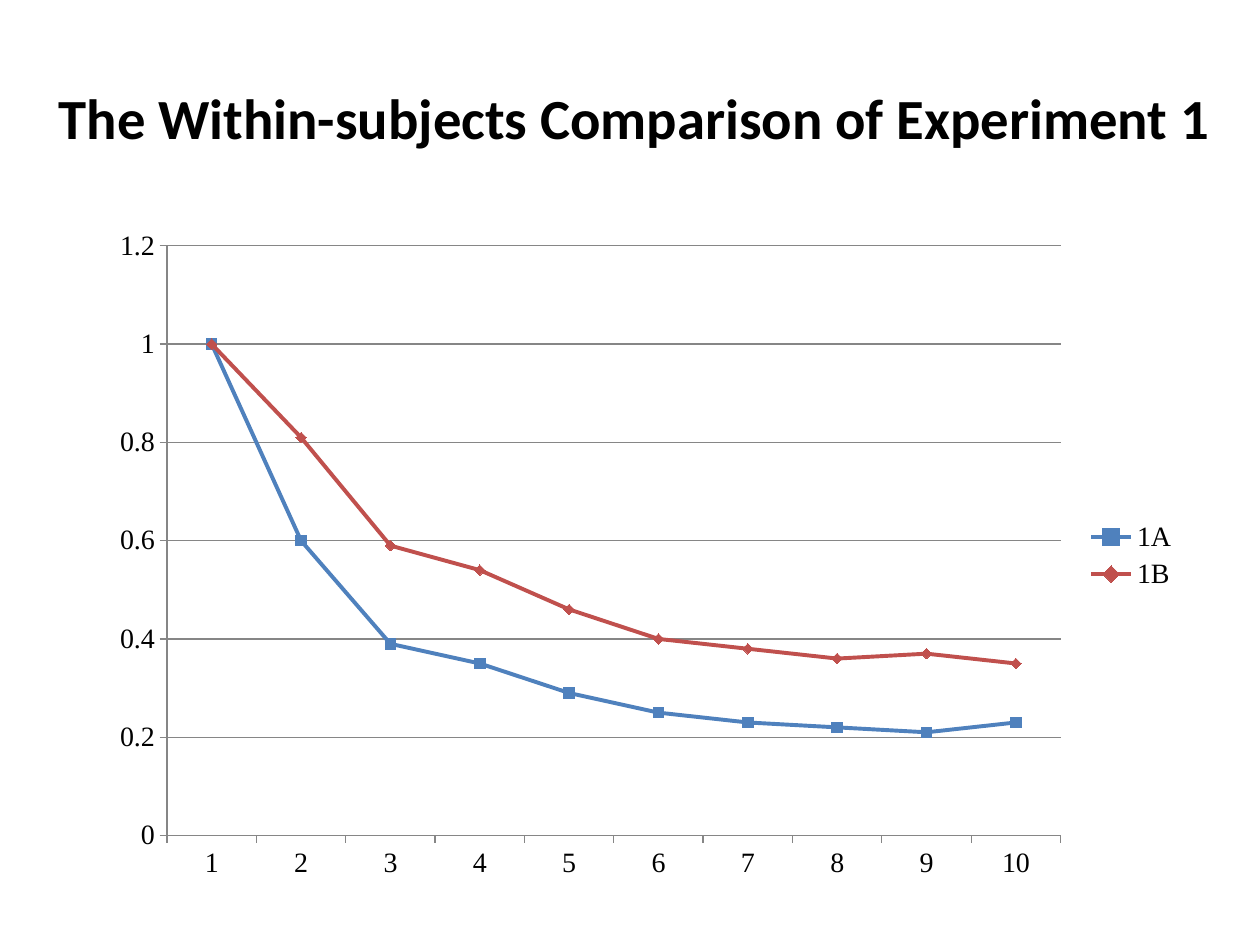
"""Build a slide with a line chart of the within-subjects comparison."""
from lxml import etree
from pptx import Presentation
from pptx.chart.data import CategoryChartData
from pptx.dml.color import RGBColor
from pptx.enum.chart import XL_CHART_TYPE as ChartType
from pptx.enum.chart import XL_LEGEND_POSITION as LegendSide
from pptx.enum.chart import XL_MARKER_STYLE as Marker
from pptx.enum.chart import XL_TICK_MARK as Tick
from pptx.enum.text import MSO_ANCHOR, MSO_AUTO_SIZE, PP_ALIGN
from pptx.oxml.ns import qn
from pptx.util import Inches, Pt


def color(hex_code):
    return RGBColor.from_string(hex_code)


prs = Presentation()
prs.slide_width, prs.slide_height = Inches(10), Inches(7.5)
slide = prs.slides.add_slide(prs.slide_layouts[5])

title = slide.shapes.title
title.left, title.top = Inches(0.31), Inches(0.3)
title.width, title.height = Inches(9.45), Inches(1.25)
heading = title.text_frame
heading.word_wrap = True
heading.auto_size = MSO_AUTO_SIZE.NONE
heading.vertical_anchor = MSO_ANCHOR.MIDDLE
heading.paragraphs[0].alignment = PP_ALIGN.CENTER
run = heading.paragraphs[0].add_run()
run.text = "The Within-subjects Comparison of Experiment 1"
run.font.name = "Calibri"
run.font.size = Pt(32.4)
run.font.bold = True
run.font.color.rgb = color("000000")

experiments = [
    ("1A", [1, 0.6, 0.39, 0.35, 0.29, 0.25, 0.23, 0.22, 0.21, 0.23], "4F81BD", Marker.SQUARE),
    ("1B", [1, 0.81, 0.59, 0.54, 0.46, 0.4, 0.38, 0.36, 0.37, 0.35], "C0504D", Marker.DIAMOND),
]
data = CategoryChartData()
data.categories = [str(block) for block in range(1, 11)]
for name, values, _, _ in experiments:
    data.add_series(name, values)
chart = slide.shapes.add_chart(
    ChartType.LINE_MARKERS, Inches(0.78), Inches(1.72), Inches(8.67), Inches(5.38), data
).chart
chart.has_title = False
chart.font.name = "Times New Roman"
chart.font.size = Pt(16)
chart.font.color.rgb = color("000000")
chart.has_legend = True
chart.legend.position = LegendSide.RIGHT
chart.legend.include_in_layout = False

for series, (_, _, tint, marker) in zip(chart.plots[0].series, experiments):
    series.smooth = False
    series.format.line.color.rgb = color(tint)
    series.format.line.width = Pt(2.25)
    series.marker.style = marker
    series.marker.size = 6
    series.marker.format.fill.solid()
    series.marker.format.fill.fore_color.rgb = color(tint)
    series.marker.format.line.color.rgb = color(tint)

scale = chart.value_axis
scale.minimum_scale, scale.maximum_scale, scale.major_unit = 0, 1.2, 0.2
scale.has_major_gridlines = True
scale.tick_labels.number_format = "General"
scale.tick_labels.number_format_is_linked = False
for axis in (chart.category_axis, scale):
    axis.major_tick_mark = Tick.OUTSIDE
    axis.minor_tick_mark = Tick.NONE
for rule in (chart.category_axis, scale, scale.major_gridlines):
    rule.format.line.color.rgb = color("868686")
    rule.format.line.width = Pt(0.75)

plot_area = chart.plots[0]._element.getparent()
for old_layout in plot_area.findall(qn("c:layout")):
    plot_area.remove(old_layout)
layout = etree.Element(qn("c:layout"))
plot_area.insert(0, layout)
manual = etree.SubElement(layout, qn("c:manualLayout"))
for tag, value in [
    ("layoutTarget", "inner"), ("xMode", "edge"), ("yMode", "edge"),
    ("x", "0.063"), ("y", "0.043"), ("w", "0.818"), ("h", "0.87"),
]:
    etree.SubElement(manual, qn(f"c:{tag}")).set("val", value)

prs.save("out.pptx")
